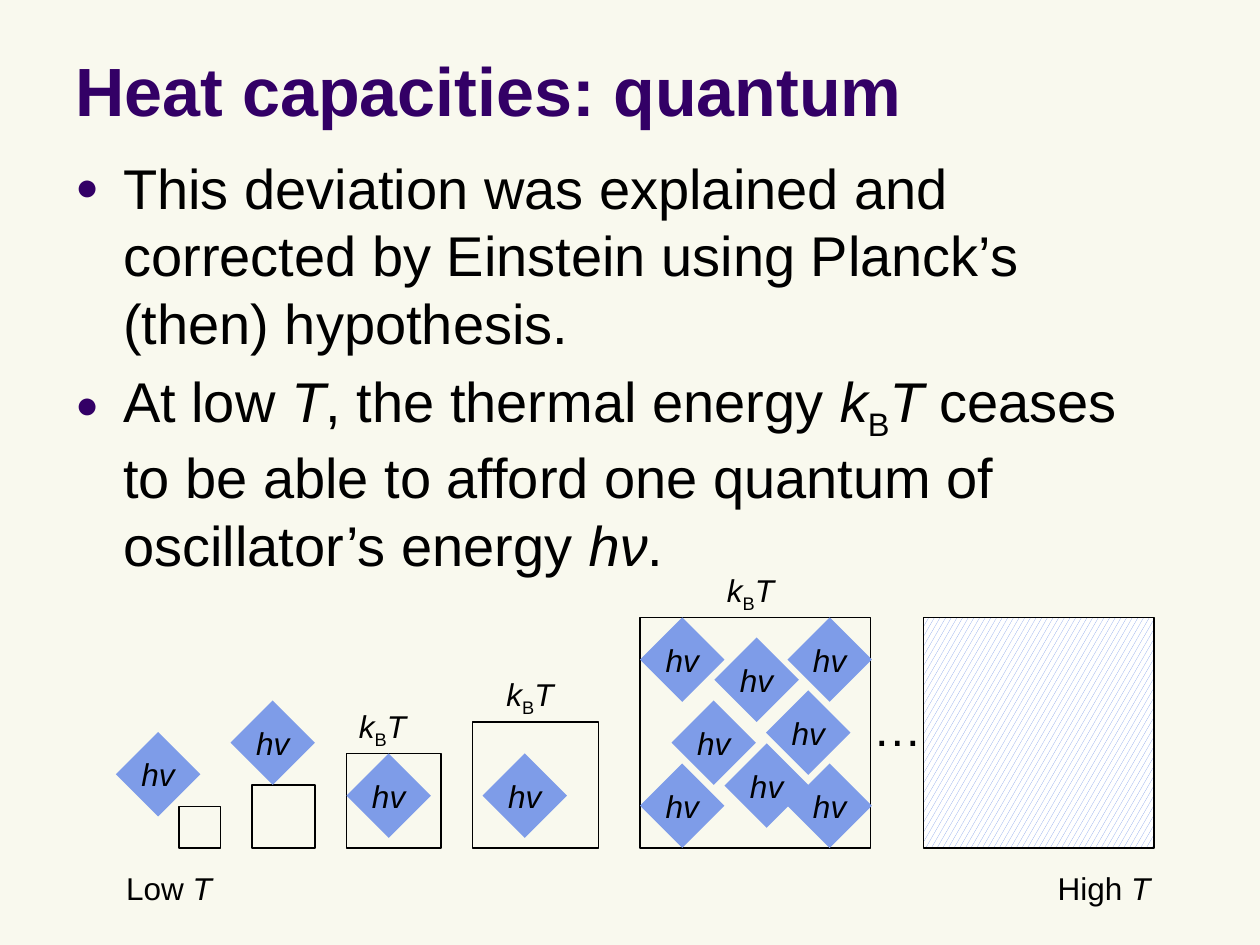
from dataclasses import dataclass

from lxml import etree
from pptx import Presentation
from pptx.dml.color import RGBColor
from pptx.enum.dml import MSO_PATTERN
from pptx.enum.shapes import MSO_SHAPE
from pptx.enum.text import MSO_ANCHOR, PP_ALIGN
from pptx.oxml.ns import qn
from pptx.util import Inches, Pt

RECT, DIAMOND = MSO_SHAPE.RECTANGLE, MSO_SHAPE.DIAMOND
CONFETTI = MSO_PATTERN.LARGE_CONFETTI
TOP, MIDDLE, BOTTOM = MSO_ANCHOR.TOP, MSO_ANCHOR.MIDDLE, MSO_ANCHOR.BOTTOM
LEFT, CENTER = PP_ALIGN.LEFT, PP_ALIGN.CENTER


@dataclass(frozen=True)
class Theme:
    font: str = "Arial"
    background: RGBColor = RGBColor(0xF9, 0xF9, 0xEE)
    accent: RGBColor = RGBColor(0x33, 0x00, 0x66)
    ink: RGBColor = RGBColor(0x00, 0x00, 0x00)
    quantum: RGBColor = RGBColor(0x7E, 0x9C, 0xE8)
    white: RGBColor = RGBColor(0xFF, 0xFF, 0xFF)
    title: int = 39
    body: int = 32
    dots: int = 28
    label: int = 18


THEME = Theme()

# Runs are (text, style): i = italic, b = subscript
KT = [("k", "i"), ("B", "b"), ("T", "i")]
BULLETS = [
    [("This deviation was explained and corrected by Einstein using "
      "Planck’s (then) hypothesis.", "")],
    [("At low ", ""), ("T", "i"), (", the thermal energy ", ""), *KT,
     (" ceases to be able to afford one quantum of oscillator’s energy ", ""),
     ("hν", "i"), (".", "")],
]

# Thermal energy boxes share a base line: (left, side)
BASE = 6.73
BOXES = [(1.42, 0.33), (2, 0.5), (2.75, 0.75), (3.75, 1), (5.08, 1.83)]
FULL_BOX = (7.33, 1.83)
QUANTUM_SIDE = 0.67
QUANTA = [(0.92, 5.81), (1.83, 5.56), (2.75, 5.98), (3.83, 5.98),
          (5.08, 4.9), (5.67, 5.06), (5.33, 5.56), (5.08, 6.06),
          (5.75, 5.9), (6.08, 5.48), (6.25, 4.9), (6.25, 6.06)]
KT_LABELS = [(2.75, 5.56), (3.92, 5.31), (5.67, 4.48)]


def write(tf, paragraphs, size, color=THEME.ink, bold=False, align=LEFT,
          anchor=TOP, wrap=True, before=0):
    tf.word_wrap, tf.vertical_anchor = wrap, anchor
    for n, runs in enumerate(paragraphs):
        p = tf.paragraphs[0] if n == 0 else tf.add_paragraph()
        p.alignment, p.space_before = align, Pt(before)
        for text, style in runs:
            r = p.add_run()
            r.text = text
            r.font.name, r.font.size = THEME.font, Pt(size)
            r.font.color.rgb, r.font.bold = color, bold
            r.font.italic = style == "i"
            if style == "b":
                r.font._element.set("baseline", "-25000")


def add_text(s, left, top, width, height, paragraphs, size, **fmt):
    box = s.shapes.add_textbox(Inches(left), Inches(top),
                               Inches(width), Inches(height))
    write(box.text_frame, paragraphs, size, **fmt)
    return box.text_frame


def add_bullet(p):
    pPr = p._p.get_or_add_pPr()
    pPr.set("marL", str(Inches(0.38)))
    pPr.set("indent", str(-Inches(0.38)))
    color = etree.SubElement(pPr, qn("a:buClr"))
    etree.SubElement(color, qn("a:srgbClr"), val=str(THEME.accent))
    etree.SubElement(pPr, qn("a:buSzPct"), val="70000")
    etree.SubElement(pPr, qn("a:buFont"), typeface=THEME.font)
    etree.SubElement(pPr, qn("a:buChar"), char="●")


def add_right_tab(p, position):
    tabs = etree.SubElement(p._p.get_or_add_pPr(), qn("a:tabLst"))
    etree.SubElement(tabs, qn("a:tab"), pos=str(Inches(position)), algn="r")


def add_square(s, kind, left, top, side):
    sp = s.shapes.add_shape(kind, Inches(left), Inches(top),
                            Inches(side), Inches(side))
    sp.shadow.inherit = False
    return sp


def add_energy_box(s, left, side, filled=False):
    sp = add_square(s, RECT, left, BASE - side, side)
    sp.line.color.rgb, sp.line.width = THEME.ink, Pt(0.75)
    if filled:
        sp.fill.patterned()
        sp.fill.pattern = CONFETTI
        sp.fill.fore_color.rgb = THEME.quantum
        sp.fill.back_color.rgb = THEME.white
    else:
        sp.fill.background()


def add_quantum(s, left, top):
    sp = add_square(s, DIAMOND, left, top, QUANTUM_SIDE)
    sp.fill.solid()
    sp.fill.fore_color.rgb = THEME.quantum
    sp.line.fill.background()
    write(sp.text_frame, [[("hv", "i")]], THEME.label,
          align=CENTER, anchor=MIDDLE, wrap=False)


def main():
    prs = Presentation()
    prs.slide_width, prs.slide_height = Inches(10), Inches(7.5)
    s = prs.slides.add_slide(prs.slide_layouts[6])
    s.background.fill.solid()
    s.background.fill.fore_color.rgb = THEME.background

    # Title and bullets
    add_text(s, 0.5, 0.13, 9, 0.95, [[("Heat capacities: quantum", "")]],
             THEME.title, color=THEME.accent, bold=True, anchor=BOTTOM)
    tf = add_text(s, 0.5, 1.17, 8.67, 4.5, BULLETS, THEME.body, before=6.4)
    for p in tf.paragraphs:
        add_bullet(p)

    # Energy boxes growing with temperature
    for left, side in BOXES:
        add_energy_box(s, left, side)
    add_energy_box(s, *FULL_BOX, filled=True)
    add_text(s, 6.83, 5.49, 0.59, 0.57, [[("…", "")]], THEME.dots, wrap=False)

    # Quanta
    for left, top in QUANTA:
        add_quantum(s, left, top)

    # Labels and temperature scale
    for left, top in KT_LABELS:
        add_text(s, left, top, 0.66, 0.4, [KT], THEME.label, wrap=False)
    scale = [("Low ", ""), ("T", "i"), ("\tHigh ", ""), ("T", "i")]
    tf = add_text(s, 0.83, 6.85, 8.58, 0.4, [scale], THEME.label)
    tf.margin_left = Inches(0.17)
    add_right_tab(tf.paragraphs[0], 8.13)

    prs.save("out.pptx")


if __name__ == "__main__":
    main()
